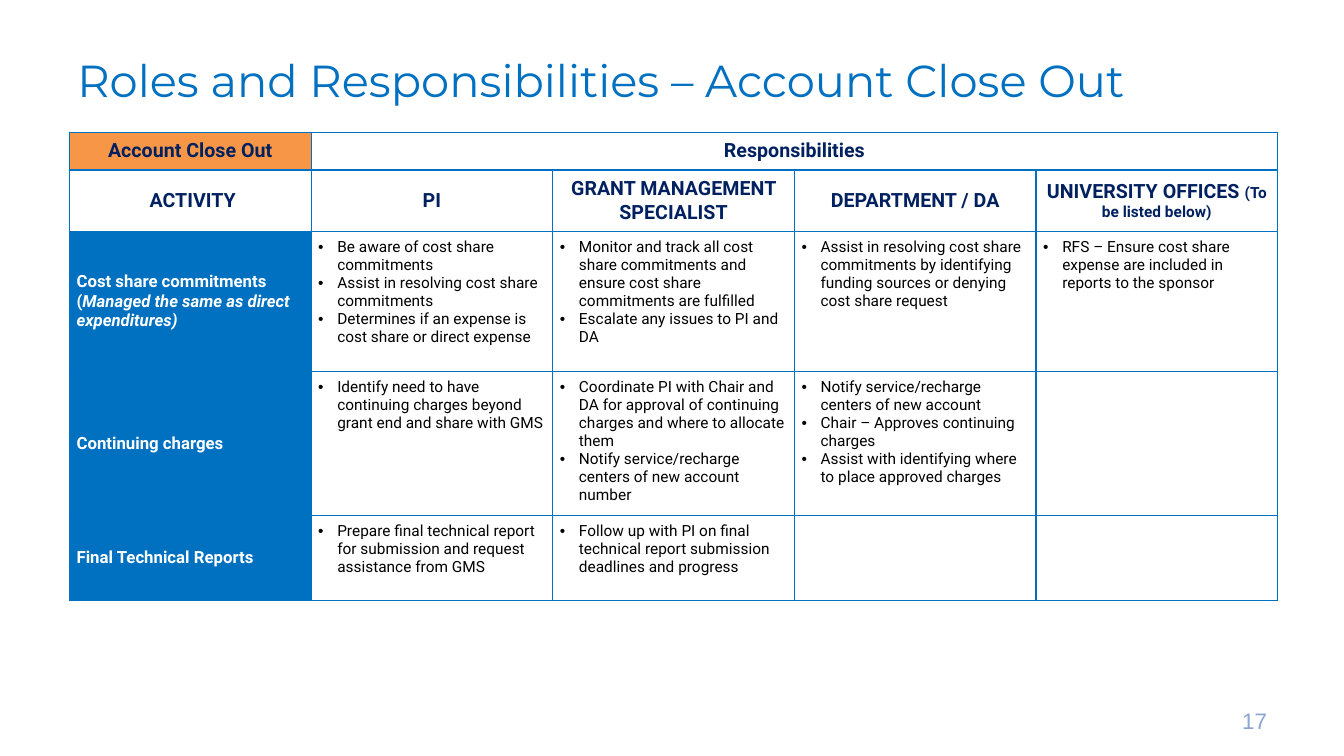
import lxml.etree
import pptx
import pptx.enum.text
import pptx.oxml.ns
import pptx.util
from pptx.dml.color import RGBColor
from pptx.util import Cm

COLORS = {"blue": "0070C0", "navy": "002060", "orange": "F79646",
          "white": "FFFFFF", "black": "000000", "page": "8CA4D2"}
ALIGN = pptx.enum.text.PP_ALIGN
MIDDLE = pptx.enum.text.MSO_ANCHOR.MIDDLE
TOP = pptx.enum.text.MSO_ANCHOR.TOP
COLUMN_WIDTH = 6.09
ROW_HEIGHTS = [0.93, 1.5, 3.53, 3.53, 2.14]
HEADINGS = [" ACTIVITY", "PI", "GRANT MANAGEMENT SPECIALIST", "DEPARTMENT / DA",
            "UNIVERSITY OFFICES "]
ACTIVITIES = [
    ("Cost share commitments", [
        ["Be aware of cost share commitments",
         "Assist in resolving cost share commitments",
         "Determines if an expense is cost share or direct expense"],
        ["Monitor and track all cost share commitments and ensure cost share "
         "commitments are fulfilled",
         "Escalate any issues to PI and DA"],
        ["Assist in resolving cost share commitments by identifying funding sources "
         "or denying cost share request"],
        ["RFS – Ensure cost share expense are included in reports to the sponsor"]]),
    ("Continuing charges", [
        ["Identify need to have continuing charges beyond grant end and share with GMS"],
        ["Coordinate PI with Chair and DA for approval of continuing charges and "
         "where to allocate them",
         "Notify service/recharge centers of new account number"],
        ["Notify service/recharge centers of new account",
         "Chair – Approves continuing charges",
         "Assist with identifying where to place approved charges"],
        []]),
    ("Final Technical Reports", [
        ["Prepare final technical report for submission and request assistance from GMS"],
        ["Follow up with PI on final technical report submission deadlines and progress"],
        [], []]),
]


def color(name):
    """Return the named colour."""
    return RGBColor.from_string(COLORS[name])


def style(font, name, size, shade, bold=False):
    """Set the face, size, colour and weight of a font."""
    font.name, font.size, font.bold = name, pptx.util.Pt(size), bold
    font.color.rgb = color(shade)


def add_span(para, text, size, shade, bold=True):
    """Append one table text run to a paragraph and return it."""
    span = para.add_run()
    span.text = text
    style(span.font, "Roboto", size, shade, bold)
    return span


def add_label(slide, text, place, name, size, shade):
    """Add a one-line text box and return it."""
    box = slide.shapes.add_textbox(*map(Cm, place))
    frame = box.text_frame
    frame.word_wrap = True
    frame.text = text
    style(frame.paragraphs[0].runs[0].font, name, size, shade)
    return box


def add_bullet(para):
    """Give a paragraph a hanging round bullet."""
    properties = para._p.get_or_add_pPr()
    properties.set("marL", str(Cm(0.48)))
    properties.set("indent", str(-Cm(0.48)))
    for tag, key, value in (("a:buFont", "typeface", "Arial"), ("a:buChar", "char", "•")):
        lxml.etree.SubElement(properties, pptx.oxml.ns.qn(tag)).set(key, value)


def add_borders(cell):
    """Draw a thin blue line on all four sides of a cell."""
    properties = cell._tc.get_or_add_tcPr()
    for index, side in enumerate("LRTB"):
        line = lxml.etree.Element(pptx.oxml.ns.qn(f"a:ln{side}"), w=str(pptx.util.Pt(1)))
        fill = lxml.etree.SubElement(line, pptx.oxml.ns.qn("a:solidFill"))
        lxml.etree.SubElement(fill, pptx.oxml.ns.qn("a:srgbClr"), val=COLORS["blue"])
        properties.insert(index, line)


def prepare_cell(cell, shade, anchor=MIDDLE):
    """Set the fill, borders, insets and anchor of a cell."""
    cell.fill.solid()
    cell.fill.fore_color.rgb = color(shade)
    cell.vertical_anchor = anchor
    cell.margin_left = cell.margin_right = cell.margin_top = cell.margin_bottom = Cm(0.18)
    add_borders(cell)


def fill_heading(cell, text):
    """Write a centred heading in a cell and return its paragraph."""
    para = cell.text_frame.paragraphs[0]
    para.alignment = ALIGN.CENTER
    add_span(para, text, 14, "navy")
    return para


def fill_duties(cell, duties):
    """Write a list of duties as bullets in a cell."""
    frame = cell.text_frame
    for index, duty in enumerate(duties):
        para = frame.add_paragraph() if index else frame.paragraphs[0]
        add_bullet(para)
        add_span(para, duty, 11, "black", False)


def add_roles_table(slide):
    """Add the table of activities and responsibilities."""
    columns = len(HEADINGS)
    table = slide.shapes.add_table(
        len(ROW_HEIGHTS), columns, Cm(1.75), Cm(3.33),
        Cm(COLUMN_WIDTH * columns), Cm(sum(ROW_HEIGHTS))).table
    for column in table.columns:
        column.width = Cm(COLUMN_WIDTH)
    for row, height in zip(table.rows, ROW_HEIGHTS):
        row.height = Cm(height)

    for index in range(columns):
        prepare_cell(table.cell(0, index), "white" if index else "orange")
    table.cell(0, 1).merge(table.cell(0, columns - 1))
    fill_heading(table.cell(0, 0), "Account Close Out")
    fill_heading(table.cell(0, 1), "Responsibilities")

    for index, heading in enumerate(HEADINGS):
        prepare_cell(table.cell(1, index), "white")
        para = fill_heading(table.cell(1, index), heading)
    add_span(para, "(To be listed below)", 11, "navy")

    for row, (activity, roles) in enumerate(ACTIVITIES, 2):
        label = table.cell(row, 0)
        prepare_cell(label, "blue")
        add_span(label.text_frame.paragraphs[0], activity, 12, "white")
        for column, duties in enumerate(roles, 1):
            prepare_cell(table.cell(row, column), "white", TOP)
            fill_duties(table.cell(row, column), duties)

    note = table.cell(2, 0).text_frame.add_paragraph()
    add_span(note, "(", 12, "white")
    add_span(note, "Managed the same as direct expenditures)", 12, "white").font.italic = True


def main():
    """Build and save the slide."""
    deck = pptx.Presentation()
    deck.slide_width, deck.slide_height = Cm(33.87), Cm(19.05)
    slide = deck.slides.add_slide(deck.slide_layouts[6])
    title = add_label(slide, "Roles and Responsibilities – Account Close Out",
                      (1.7, 0.89, 33.35, 1.85), "Montserrat", 32, "blue")
    title.text_frame.paragraphs[0].line_spacing = pptx.util.Pt(47.2)
    add_roles_table(slide)
    number = add_label(slide, "17", (24.28, 17.65, 7.9, 1.02), "Arial", 16, "page")
    number.text_frame.vertical_anchor = MIDDLE
    number.text_frame.paragraphs[0].alignment = ALIGN.RIGHT
    deck.save("out.pptx")


if __name__ == "__main__":
    main()
